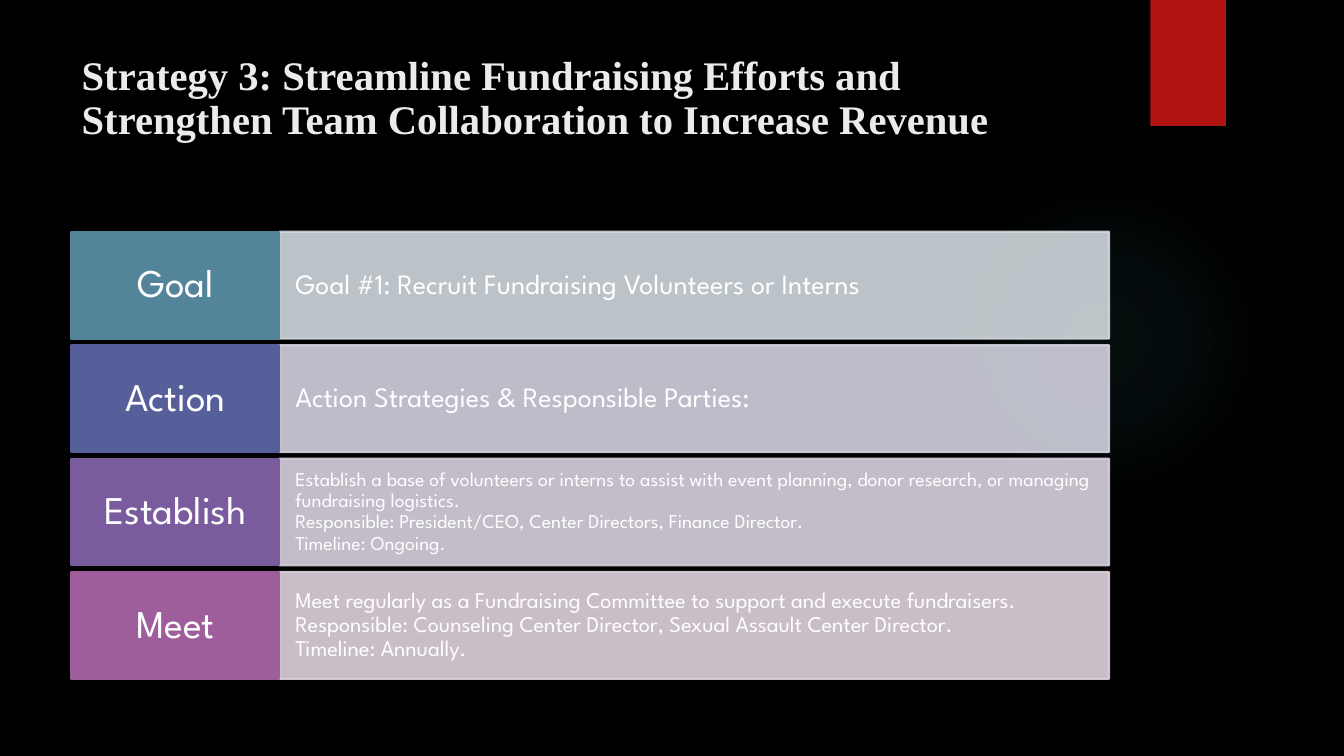
from dataclasses import dataclass

from lxml.etree import SubElement
from pptx import Presentation
from pptx.dml.color import RGBColor
from pptx.enum.shapes import MSO_SHAPE as Preset
from pptx.enum.text import MSO_ANCHOR as Anchor, MSO_AUTO_SIZE as AutoSize, PP_ALIGN as Align
from pptx.oxml import parse_xml
from pptx.oxml.ns import nsdecls, qn
from pptx.shapes.autoshape import Shape
from pptx.slide import Slide
from pptx.util import Inches, Pt

COLORS = {
    "background": "000000",
    "title": "EBEBEB",
    "text": "FFFFFF",
    "ribbon": "B01513",
    "glow": "50B9C1",
    "teal": "54849A",
    "pale teal": "D1D9DE",
    "blue": "575F9B",
    "pale blue": "D1D2DE",
    "violet": "7A5B9D",
    "pale violet": "D8D2DE",
    "plum": "9E5E9B",
    "pale plum": "DFD2DE",
}
FONT = "League Spartan"
LEFT, TOP, PITCH, HEIGHT = 0.71, 2.3, 1.125, 1.06
LABEL_WIDTH, DETAIL_WIDTH = 2.06, 8.23


@dataclass
class Row:
    label: str
    detail: str
    size: int
    color: str


@dataclass
class Panel:
    left: float
    top: float
    width: float
    color: str
    text: str
    size: int
    align: Align
    margin_x: float
    margin_y: float
    opacity: int = 100


ROWS = [
    Row("Goal", "Goal #1: Recruit Fundraising Volunteers or Interns", 20, "teal"),
    Row("Action", "Action Strategies & Responsible Parties:", 20, "blue"),
    Row(
        "Establish",
        "Establish a base of volunteers or interns to assist with event planning, "
        "donor research, or managing fundraising logistics.\v"
        "Responsible: President/CEO, Center Directors, Finance Director.\v"
        "Timeline: Ongoing.",
        14,
        "violet",
    ),
    Row(
        "Meet",
        "Meet regularly as a Fundraising Committee to support and execute fundraisers.\v"
        "Responsible: Counseling Center Director, Sexual Assault Center Director.\v"
        "Timeline: Annually.",
        16,
        "plum",
    ),
]


def rgb(name: str) -> RGBColor:
    return RGBColor.from_string(COLORS[name])


def add_plain_shape(page: Slide, preset: Preset, left: float, top: float,
                    width: float, height: float) -> Shape:
    shape = page.shapes.add_shape(
        preset, Inches(left), Inches(top), Inches(width), Inches(height))
    shape.shadow.inherit = False
    shape.line.fill.background()
    return shape


def add_glow(page: Slide) -> None:
    glow = add_plain_shape(page, Preset.OVAL, 9.41, 1.83, 3.08, 3.08)
    stops = "".join(
        f'<a:gs pos="{position * 1000}"><a:srgbClr val="{COLORS["glow"]}">'
        f'<a:alpha val="{opacity * 1000}"/></a:srgbClr></a:gs>'
        for position, opacity in ((0, 7), (36, 6), (69, 0)))
    gradient = parse_xml(
        f'<a:gradFill {nsdecls("a")}><a:gsLst>{stops}</a:gsLst><a:path path="circle">'
        '<a:fillToRect l="50000" t="50000" r="50000" b="50000"/></a:path></a:gradFill>')
    glow.element.spPr.find(qn("a:prstGeom")).addnext(gradient)


def add_ribbon(page: Slide) -> None:
    ribbon = add_plain_shape(page, Preset.RECTANGLE, 11.41, 0, 0.75, 1.25)
    ribbon.fill.solid()
    ribbon.fill.fore_color.rgb = rgb("ribbon")


def format_title(page: Slide) -> None:
    title = page.shapes.title
    title.left, title.top = Inches(0.71), Inches(0.5)
    title.width, title.height = Inches(10.29), Inches(1.53)
    frame = title.text_frame
    frame.text = ("Strategy 3: Streamline Fundraising Efforts and "
                  "Strengthen Team Collaboration to Increase Revenue")
    frame.word_wrap = True
    frame.auto_size = AutoSize.NONE
    frame.vertical_anchor = Anchor.TOP
    para = frame.paragraphs[0]
    para.alignment = Align.LEFT
    para.line_spacing = 0.9
    para.space_after = Pt(8)
    font = para.runs[0].font
    font.name, font.size, font.bold = "Times New Roman", Pt(29), True
    font.color.rgb = rgb("title")


def add_panel(page: Slide, panel: Panel) -> None:
    box = add_plain_shape(
        page, Preset.RECTANGLE, panel.left, panel.top, panel.width, HEIGHT)
    box.fill.solid()
    box.fill.fore_color.rgb = rgb(panel.color)
    box.line.color.rgb = rgb(panel.color)
    box.line.width = Pt(1.5)
    if panel.opacity < 100:
        for color in box.element.spPr.iter(qn("a:srgbClr")):
            SubElement(color, qn("a:alpha"), val=str(panel.opacity * 1000))
    frame = box.text_frame
    frame.word_wrap = True
    frame.vertical_anchor = Anchor.MIDDLE
    frame.margin_left = frame.margin_right = Inches(panel.margin_x)
    frame.margin_top = frame.margin_bottom = Inches(panel.margin_y)
    para = frame.paragraphs[0]
    para.text = panel.text
    para.alignment = panel.align
    para.line_spacing = 0.9
    for span in para.runs:
        span.font.name, span.font.size = FONT, Pt(panel.size)
        span.font.color.rgb = rgb("text")


def main() -> None:
    deck = Presentation()
    deck.slide_width, deck.slide_height = Inches(13.33), Inches(7.5)
    page = deck.slides.add_slide(deck.slide_layouts[5])
    page.background.fill.solid()
    page.background.fill.fore_color.rgb = rgb("background")
    add_glow(page)
    add_ribbon(page)
    format_title(page)
    for index, row in enumerate(ROWS):
        top = TOP + index * PITCH
        add_panel(page, Panel(LEFT + LABEL_WIDTH, top, DETAIL_WIDTH, f"pale {row.color}",
                              row.detail, row.size, Align.LEFT, 0.16, 0.27, 90))
        add_panel(page, Panel(LEFT, top, LABEL_WIDTH, row.color,
                              row.label, 28, Align.CENTER, 0.11, 0.1))
    deck.save("out.pptx")


if __name__ == "__main__":
    main()
